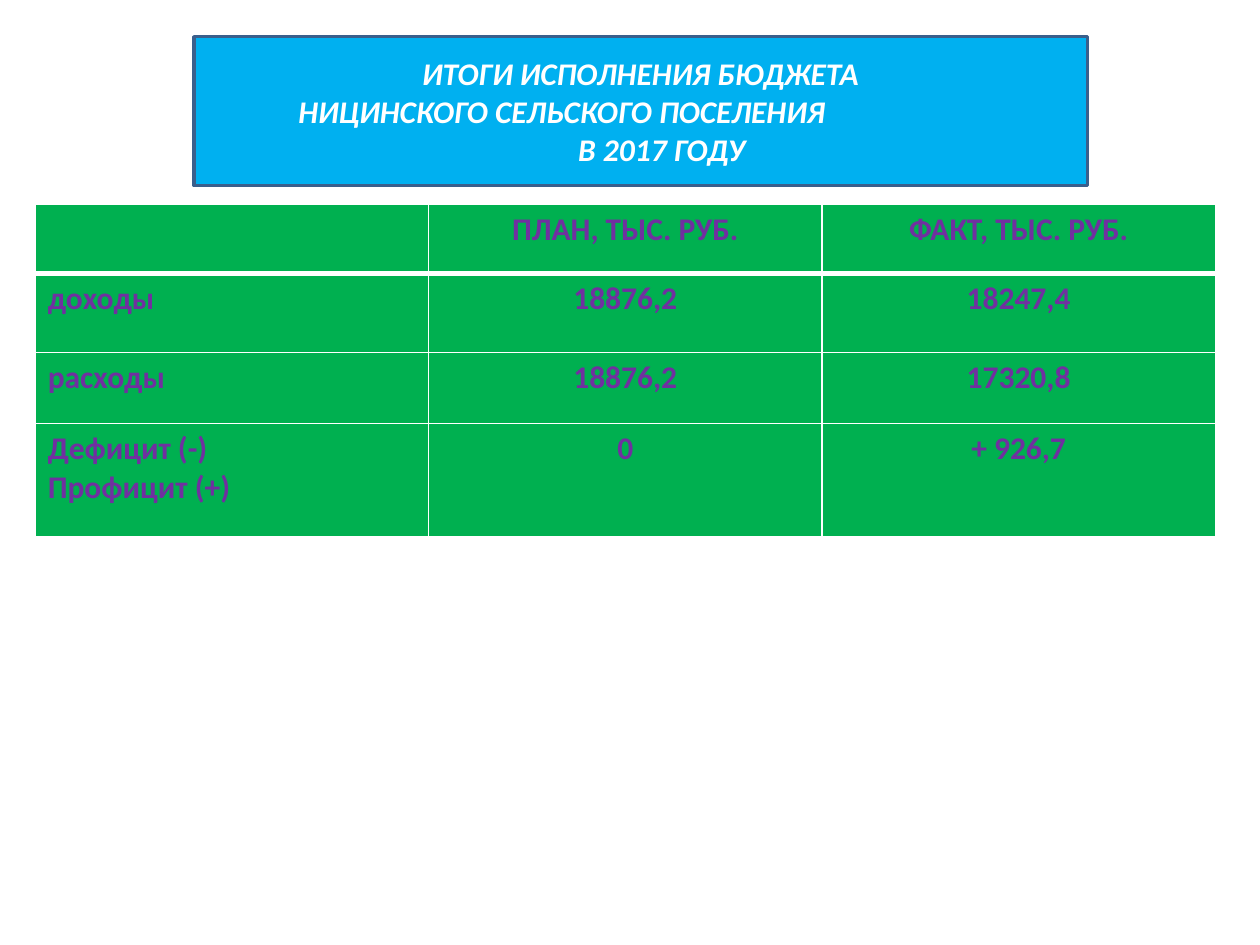
from dataclasses import dataclass

from lxml.etree import SubElement
from pptx import Presentation
from pptx.dml.color import RGBColor
from pptx.enum.text import MSO_ANCHOR, MSO_AUTO_SIZE, PP_ALIGN
from pptx.oxml.ns import qn
from pptx.util import Cm, Pt

WHITE = RGBColor(0xFF, 0xFF, 0xFF)
SKY = RGBColor(0x00, 0xB0, 0xF0)
NAVY = RGBColor(0x3A, 0x5F, 0x8C)
GREEN = RGBColor(0x00, 0xB0, 0x50)
PURPLE = RGBColor(0x70, 0x30, 0xA0)

COLUMN_WIDTH = Cm(7.93)
THIN, THICK = Pt(1), Pt(3)


@dataclass
class TitleLine:
    text: str
    alignment: PP_ALIGN = PP_ALIGN.CENTER
    indent: float = 0


@dataclass
class BudgetRow:
    height: float
    label: str
    plan: str
    fact: str


TITLE_LINES = [
    TitleLine("ИТОГИ ИСПОЛНЕНИЯ БЮДЖЕТА"),
    TitleLine("НИЦИНСКОГО СЕЛЬСКОГО ПОСЕЛЕНИЯ", PP_ALIGN.LEFT, 1.85),
    TitleLine("В 2017 ГОДУ", indent=0.85),
]
BUDGET_ROWS = [
    BudgetRow(1.39, "", "ПЛАН, ТЫС. РУБ.", "ФАКТ, ТЫС. РУБ."),
    BudgetRow(1.6, "доходы", "18876,2", "18247,4"),
    BudgetRow(1.43, "расходы", "18876,2", "17320,8"),
    BudgetRow(2.29, "Дефицит (-)\nПрофицит (+)", "0", "+ 926,7"),
]


def add_span(para, text: str, color: RGBColor, italic: bool = False) -> None:
    span = para.add_run()
    span.text = text
    span.font.name = "Calibri"
    span.font.size = Pt(18)
    span.font.bold = True
    span.font.italic = italic
    span.font.color.rgb = color


def draw_title(box) -> None:
    box.left, box.top, box.width, box.height = Cm(3.91), Cm(0.74), Cm(18.01), Cm(3)
    box.fill.solid()
    box.fill.fore_color.rgb = SKY
    box.line.color.rgb = NAVY
    box.line.width = Pt(2)
    frame = box.text_frame
    frame.word_wrap = True
    frame.auto_size = MSO_AUTO_SIZE.NONE
    frame.vertical_anchor = MSO_ANCHOR.MIDDLE
    for index, line in enumerate(TITLE_LINES):
        para = frame.add_paragraph() if index else frame.paragraphs[0]
        para.alignment = line.alignment
        if line.indent:
            para._p.get_or_add_pPr().set("marL", str(Cm(line.indent)))
        add_span(para, line.text, WHITE, italic=True)


def set_borders(cell, top: int, bottom: int) -> None:
    properties = cell._tc.get_or_add_tcPr()
    for tag, width in (("a:lnL", THIN), ("a:lnR", THIN), ("a:lnT", top), ("a:lnB", bottom)):
        line = SubElement(properties, qn(tag), w=str(width))
        fill = SubElement(line, qn("a:solidFill"))
        SubElement(fill, qn("a:srgbClr"), val=str(WHITE))


def fill_cell(cell, text: str, alignment: PP_ALIGN) -> None:
    cell.fill.solid()
    cell.fill.fore_color.rgb = GREEN
    para = cell.text_frame.paragraphs[0]
    para.alignment = alignment
    for index, part in enumerate(text.split("\n") if text else []):
        if index:
            para.add_line_break()
        add_span(para, part, PURPLE)


def draw_budget(slide) -> None:
    height = Cm(sum(row.height for row in BUDGET_ROWS))
    table = slide.shapes.add_table(
        len(BUDGET_ROWS), 3, Cm(0.71), Cm(4.12), 3 * COLUMN_WIDTH, height
    ).table
    for column in table.columns:
        column.width = COLUMN_WIDTH
    for row_index, row in enumerate(BUDGET_ROWS):
        table.rows[row_index].height = Cm(row.height)
        for column_index, text in enumerate((row.label, row.plan, row.fact)):
            cell = table.cell(row_index, column_index)
            set_borders(
                cell,
                top=THICK if row_index == 1 else THIN,
                bottom=THICK if row_index == 0 else THIN,
            )
            fill_cell(cell, text, PP_ALIGN.CENTER if column_index else PP_ALIGN.LEFT)


def main() -> None:
    deck = Presentation()
    deck.slide_width, deck.slide_height = Cm(25.4), Cm(19.05)
    slide = deck.slides.add_slide(deck.slide_layouts[5])
    draw_title(slide.shapes.title)
    draw_budget(slide)
    deck.save("out.pptx")


if __name__ == "__main__":
    main()
